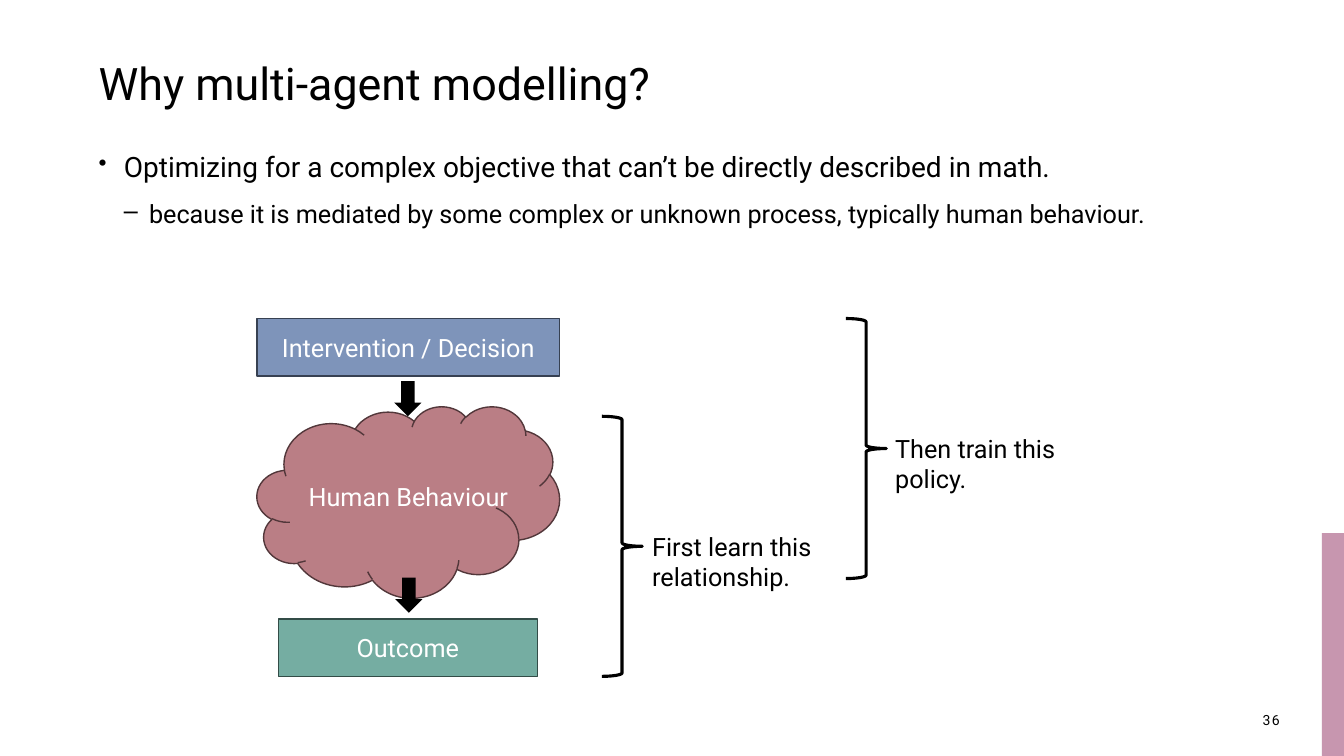
from lxml import etree
from pptx import Presentation
from pptx.dml.color import RGBColor
from pptx.enum.shapes import MSO_SHAPE
from pptx.enum.text import MSO_ANCHOR, PP_ALIGN
from pptx.oxml.ns import qn
from pptx.util import Inches, Pt

RECTANGLE, CLOUD = MSO_SHAPE.RECTANGLE, MSO_SHAPE.CLOUD
BRACE, ARROW = MSO_SHAPE.RIGHT_BRACE, MSO_SHAPE.RIGHT_ARROW
TOP, MIDDLE, BOTTOM = MSO_ANCHOR.TOP, MSO_ANCHOR.MIDDLE, MSO_ANCHOR.BOTTOM
LEFT, CENTER, RIGHT = PP_ALIGN.LEFT, PP_ALIGN.CENTER, PP_ALIGN.RIGHT
BLACK, WHITE = "000000", "FFFFFF"

presentation = Presentation()
presentation.slide_width = Inches(13.33)
presentation.slide_height = Inches(7.5)
slide = presentation.slides.add_slide(presentation.slide_layouts[6])


def add_shape(kind, box, fill=None, line=None, width=1):
    shape = slide.shapes.add_shape(kind, *map(Inches, box))
    shape.shadow.inherit = False
    if fill:
        shape.fill.solid()
        shape.fill.fore_color.rgb = RGBColor.from_string(fill)
    else:
        shape.fill.background()
    if line:
        shape.line.color.rgb = RGBColor.from_string(line)
        shape.line.width = Pt(width)
    else:
        shape.line.fill.background()
    return shape


def write(paragraph, text, size, color=BLACK, **formats):
    run = paragraph.add_run()
    run.text = text
    run.font.name = "Roboto"
    run.font.size = Pt(size)
    run.font.color.rgb = RGBColor.from_string(color)
    for name, value in formats.items():
        setattr(paragraph, name, value)
    return run


# Accent bar at the right edge
add_shape(RECTANGLE, (13.11, 5.29, 0.22, 2.21), "C796AF")

# Braces around the steps
for brace_box in ((5.97, 4.13, 0.4, 2.58), (8.39, 3.16, 0.4, 2.58)):
    add_shape(BRACE, brace_box, line=BLACK, width=2.25)

# Diagram: intervention, human behaviour, outcome
add_shape(CLOUD, (2.55, 4.03, 3, 1.9), "BA7E85", "52373A")
steps = (
    ("Intervention / Decision", (2.55, 3.16, 3, 0.57), "7E94BA", "374152"),
    ("Outcome", (2.76, 6.14, 2.57, 0.57), "75ADA2", "334C47"),
)
for text, box, fill, line in steps:
    step = add_shape(RECTANGLE, box, fill, line)
    step.text_frame.vertical_anchor = MIDDLE
    write(step.text_frame.paragraphs[0], text, 18, WHITE, alignment=CENTER)
for left, top in ((3.87, 3.82), (3.88, 5.77)):
    arrow = add_shape(ARROW, (left, top, 0.35, 0.27), BLACK)
    arrow.rotation = 90

# Title, labels and slide number
labels = (
    ("Why multi-agent modelling?", (0.88, 0.4, 11.33, 0.74), 32, BLACK, BOTTOM, LEFT, 1.2),
    ("First learn this relationship.", (6.37, 5.22, 2.02, 0.71), 18, BLACK, TOP, LEFT, 1),
    ("Then train this policy.", (8.78, 4.25, 2.02, 0.71), 18, BLACK, TOP, LEFT, 1),
    ("Human Behaviour", (2.54, 4.73, 3.02, 0.4), 18, WHITE, TOP, CENTER, 1),
    ("36", (12.21, 6.94, 0.58, 0.4), 10, BLACK, MIDDLE, RIGHT, 1),
)
for text, box, size, color, anchor, alignment, spacing in labels:
    frame = slide.shapes.add_textbox(*map(Inches, box)).text_frame
    frame.word_wrap = True
    frame.vertical_anchor = anchor
    run = write(frame.paragraphs[0], text, size, color,
                alignment=alignment, line_spacing=spacing)
run.font._element.set("spc", "100")  # letter spacing of the slide number

# Bulleted statement
body = slide.shapes.add_textbox(*map(Inches, (0.88, 1.33, 11.33, 5.38))).text_frame
body.word_wrap = True
bullets = (
    ("•", 85, "Optimizing for a complex objective that can’t be directly described in math.", 20, 0),
    ("–", 100, "because it is mediated by some complex or unknown process, "
     "typically human behaviour.", 18, 5),
)
for level, (bullet, bullet_size, text, size, space) in enumerate(bullets):
    paragraph = body.add_paragraph() if level else body.paragraphs[0]
    properties = paragraph._p.get_or_add_pPr()
    properties.set("marL", str(Inches(0.25 * (level + 1))))
    properties.set("indent", str(Inches(-0.25)))
    etree.SubElement(properties, qn("a:buSzPct"), val=str(bullet_size * 1000))
    etree.SubElement(properties, qn("a:buChar"), char=bullet)
    write(paragraph, text, size, level=level, line_spacing=1.3, space_before=Pt(space))

presentation.save("out.pptx")
